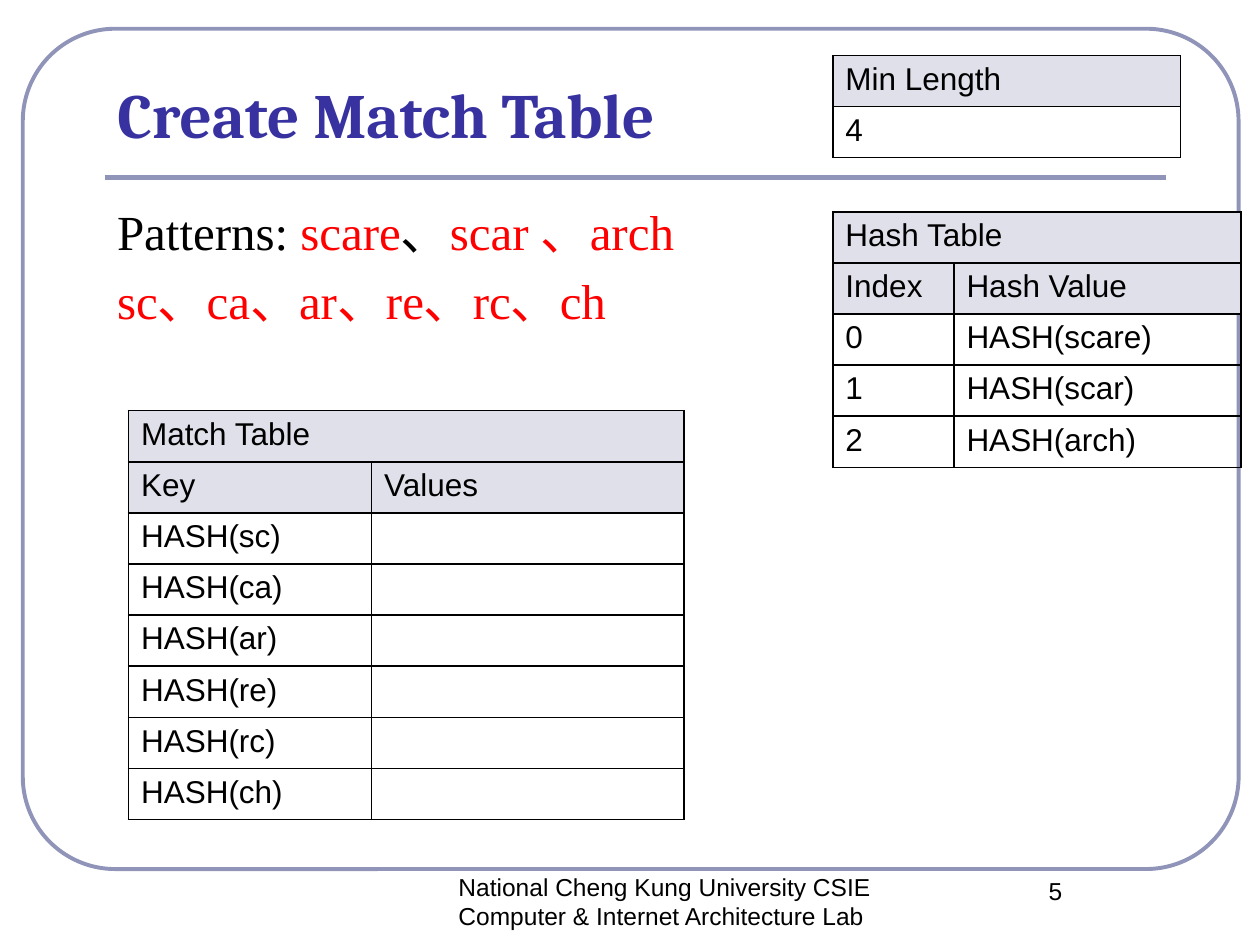
from dataclasses import dataclass

from lxml import etree
from pptx import Presentation
from pptx.dml.color import RGBColor
from pptx.enum.shapes import MSO_CONNECTOR, MSO_SHAPE
from pptx.enum.text import MSO_ANCHOR, MSO_AUTO_SIZE, PP_ALIGN
from pptx.oxml.ns import qn
from pptx.util import Cm, Pt

ROUNDED = MSO_SHAPE.ROUNDED_RECTANGLE
STRAIGHT = MSO_CONNECTOR.STRAIGHT
LEFT, CENTER = PP_ALIGN.LEFT, PP_ALIGN.CENTER
TOP, BOTTOM = MSO_ANCHOR.TOP, MSO_ANCHOR.BOTTOM
FIXED = MSO_AUTO_SIZE.NONE
ROW_HEIGHT = 1.03


@dataclass(frozen=True)
class Theme:
    black: str = "000000"
    red: str = "FF0000"
    title: str = "3732A0"
    frame: str = "9094B8"
    header: str = "E0E0EB"
    title_font: str = "Cambria"
    body_font: str = "Times New Roman"
    plain_font: str = "Arial"
    title_size: float = 36
    body_size: float = 28
    table_size: float = 18
    footer_size: float = 14
    frame_width: float = 2.25
    rule_width: float = 3
    border_width: float = 1


@dataclass(frozen=True)
class Box:
    left: float
    top: float
    width: float
    height: float

    def lengths(self) -> tuple:
        return Cm(self.left), Cm(self.top), Cm(self.width), Cm(self.height)


@dataclass(frozen=True)
class TableData:
    left: float
    top: float
    columns: tuple
    header_rows: int
    rows: tuple


THEME = Theme()

MATCH_KEYS = ("sc", "ca", "ar", "re", "rc", "ch")
PATTERNS = ("scare", "scar", "arch")
TABLES = (
    TableData(2.59, 8.28, (4.9, 6.3), 2,
              (("Match Table",), ("Key", "Values"),
               *((f"HASH({key})", "") for key in MATCH_KEYS))),
    TableData(16.79, 1.12, (7.01,), 1, (("Min Length",), ("4",))),
    TableData(16.79, 4.27, (2.44, 5.79), 2,
              (("Hash Table",), ("Index", "Hash Value"),
               *((str(index), f"HASH({pattern})")
                 for index, pattern in enumerate(PATTERNS)))),
)

# Each body line is a list of (text, colour) pieces
BODY_LINES = (
    (("Patterns: ", THEME.black), ("scare", THEME.red), ("、", THEME.black),
     ("scar 、arch", THEME.red)),
    (("、".join(MATCH_KEYS), THEME.red),),
)


def write(paragraph, text: str, *, font: str = THEME.plain_font,
          size: float = THEME.table_size, color: str = THEME.black,
          bold: bool = False, align: PP_ALIGN = LEFT) -> None:
    paragraph.alignment = align
    run = paragraph.add_run()
    run.text = text
    run.font.name = font
    run.font.size = Pt(size)
    run.font.bold = bold
    run.font.color.rgb = RGBColor.from_string(color)


def add_text_frame(slide, box: Box):
    text_frame = slide.shapes.add_textbox(*box.lengths()).text_frame
    text_frame.word_wrap = True
    return text_frame


def style_line(line, width: float) -> None:
    line.color.rgb = RGBColor.from_string(THEME.frame)
    line.width = Pt(width)


def add_frame(slide) -> None:
    frame = slide.shapes.add_shape(ROUNDED, *Box(0.46, 0.58, 24.51, 16.94).lengths())
    frame.adjustments[0] = 0.11
    frame.shadow.inherit = False
    frame.fill.background()
    style_line(frame.line, THEME.frame_width)

    rule = slide.shapes.add_connector(STRAIGHT, Cm(2.11), Cm(3.58), Cm(23.5), Cm(3.58))
    style_line(rule.line, THEME.rule_width)
    etree.SubElement(rule._element.spPr, qn("a:effectLst"))


def add_title(slide, text: str) -> None:
    title = slide.shapes.title
    title.left, title.top, title.width, title.height = Box(2.11, 1.52, 21.39, 1.65).lengths()
    text_frame = title.text_frame
    text_frame.auto_size = FIXED
    text_frame.vertical_anchor = BOTTOM
    write(text_frame.paragraphs[0], text, font=THEME.title_font,
          size=THEME.title_size, color=THEME.title, bold=True)


def add_body(slide) -> None:
    text_frame = add_text_frame(slide, Box(2.11, 3.94, 21.39, 12.57))
    for index, pieces in enumerate(BODY_LINES):
        paragraph = text_frame.add_paragraph() if index else text_frame.paragraphs[0]
        paragraph.space_before = Pt(THEME.body_size * 0.2)
        for text, color in pieces:
            write(paragraph, text, font=THEME.body_font,
                  size=THEME.body_size, color=color)


def add_footer(slide, text: str, box: Box) -> None:
    write(add_text_frame(slide, box).paragraphs[0], text,
          size=THEME.footer_size, align=CENTER)


def set_borders(cell) -> None:
    properties = cell._tc.get_or_add_tcPr()
    for position, side in enumerate(("lnL", "lnR", "lnT", "lnB")):
        border = etree.Element(qn(f"a:{side}"), w=str(Pt(THEME.border_width)))
        fill = etree.SubElement(border, qn("a:solidFill"))
        etree.SubElement(fill, qn("a:srgbClr"), val=THEME.black)
        properties.insert(position, border)


def add_table(slide, data: TableData) -> None:
    box = Box(data.left, data.top, sum(data.columns), ROW_HEIGHT * len(data.rows))
    table = slide.shapes.add_table(len(data.rows), len(data.columns), *box.lengths()).table
    table.first_row = table.horz_banding = False
    for column, width in zip(table.columns, data.columns):
        column.width = Cm(width)

    for row_index, texts in enumerate(data.rows):
        table.rows[row_index].height = Cm(ROW_HEIGHT)
        for column_index in range(len(data.columns)):
            cell = table.cell(row_index, column_index)
            cell.vertical_anchor = TOP
            if row_index < data.header_rows:
                cell.fill.solid()
                cell.fill.fore_color.rgb = RGBColor.from_string(THEME.header)
            else:
                cell.fill.background()
            set_borders(cell)
        # A row with fewer texts than columns spans the whole table
        if len(texts) < len(data.columns):
            table.cell(row_index, 0).merge(table.cell(row_index, len(data.columns) - 1))
        for column_index, text in enumerate(texts):
            if text:
                write(table.cell(row_index, column_index).text_frame.paragraphs[0], text)


def main() -> None:
    presentation = Presentation()
    presentation.slide_width, presentation.slide_height = Cm(25.4), Cm(19.05)
    slide = presentation.slides.add_slide(presentation.slide_layouts[5])

    # Frame and heading
    add_frame(slide)
    add_title(slide, "Create Match Table")

    # Footer and page number
    add_footer(slide, "National Cheng Kung University CSIE Computer & Internet Architecture Lab ",
               Box(7.9, 17.45, 11, 1.27))
    add_footer(slide, "5", Box(19.05, 17.53, 4.45, 1.27))

    # Patterns and tables
    add_body(slide)
    for data in TABLES:
        add_table(slide, data)

    presentation.save("out.pptx")


if __name__ == "__main__":
    main()
